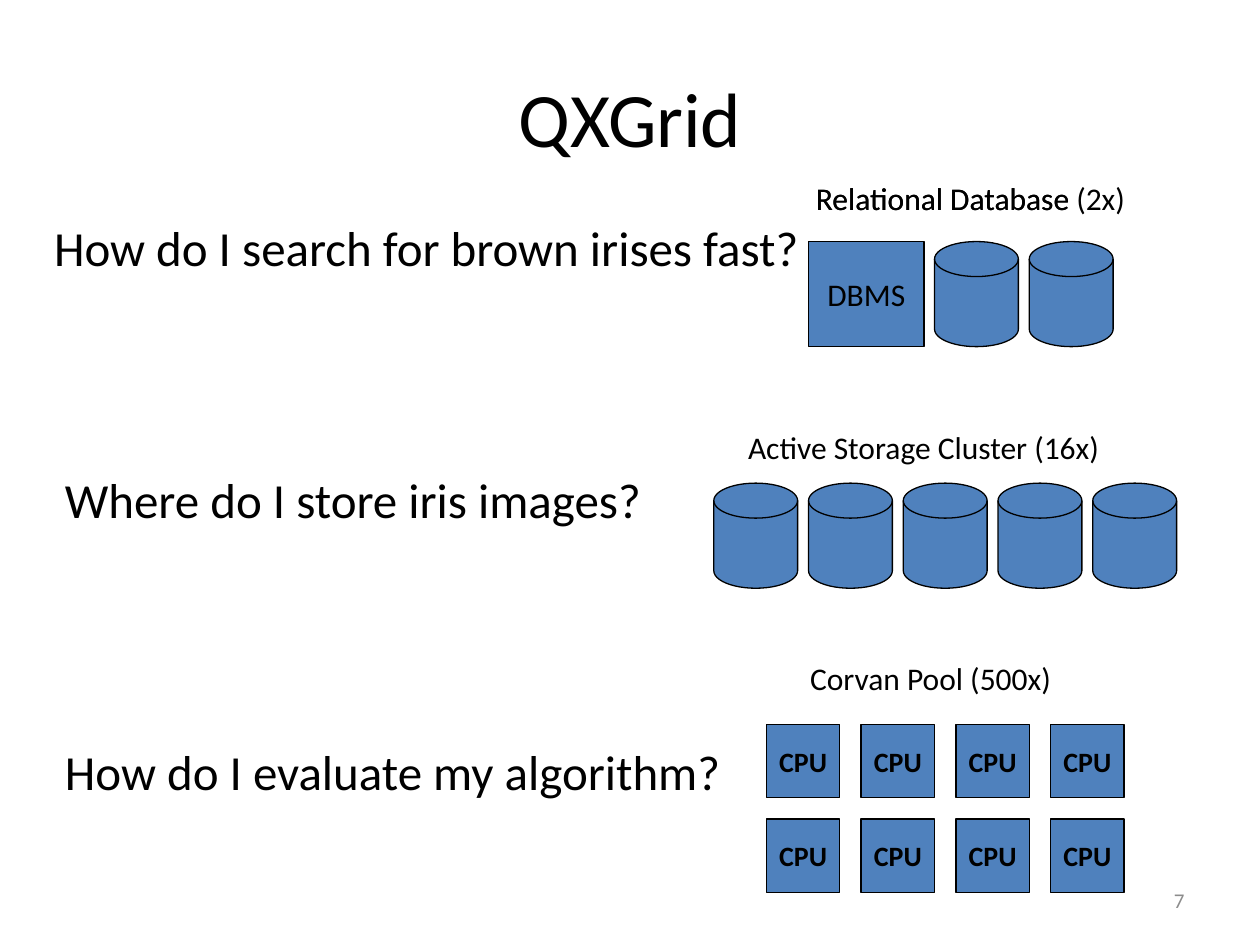
from pptx import Presentation
from pptx.dml.color import RGBColor
from pptx.enum.shapes import MSO_SHAPE
from pptx.enum.text import MSO_ANCHOR, MSO_AUTO_SIZE, PP_ALIGN
from pptx.util import Cm, Pt

COLORS = {"ink": "000000", "fill": "4F81BD", "gray": "8C8C8C"}
FONT = "Calibri"
STEP = 1.91  # pitch of disks and CPUs, in cm


class Board:
    def __init__(self, slide):
        self.slide = slide

    def color(self, name):
        return RGBColor.from_string(COLORS[name])

    def add_text(self, frame, text, size, color="ink", bold=False, align=PP_ALIGN.LEFT):
        para = frame.paragraphs[0]
        para.alignment = align
        run = para.add_run()
        run.text = text
        font = run.font
        font.name, font.size, font.bold = FONT, Pt(size), bold
        font.color.rgb = self.color(color)

    def title(self, text):
        shape = self.slide.shapes.title
        shape.left, shape.top = Cm(1.27), Cm(0.76)
        shape.width, shape.height = Cm(22.86), Cm(3.18)
        shape.text_frame.vertical_anchor = MSO_ANCHOR.MIDDLE
        self.add_text(shape.text_frame, text, 44, align=PP_ALIGN.CENTER)

    def label(self, text, left, top, width, height, size):
        box = self.slide.shapes.add_textbox(Cm(left), Cm(top), Cm(width), Cm(height))
        frame = box.text_frame
        frame.word_wrap = False
        frame.auto_size = MSO_AUTO_SIZE.SHAPE_TO_FIT_TEXT
        self.add_text(frame, text, size)

    def shape(self, kind, left, top, width, height):
        shape = self.slide.shapes.add_shape(kind, Cm(left), Cm(top), Cm(width), Cm(height))
        shape.shadow.inherit = False
        shape.fill.solid()
        shape.fill.fore_color.rgb = self.color("fill")
        shape.line.color.rgb = self.color("ink")
        shape.line.width = Pt(0.75)
        return shape

    def block(self, text, left, top, width, height, size, bold=False):
        frame = self.shape(MSO_SHAPE.RECTANGLE, left, top, width, height).text_frame
        frame.word_wrap = False
        frame.vertical_anchor = MSO_ANCHOR.MIDDLE
        self.add_text(frame, text, size, bold=bold, align=PP_ALIGN.CENTER)

    def disks(self, count, left, top):
        for col in range(count):
            self.shape(MSO_SHAPE.FLOWCHART_MAGNETIC_DISK, left + col * STEP, top, 1.69, 2.12)

    def number(self, text):
        box = self.slide.shapes.add_textbox(Cm(18.2), Cm(17.65), Cm(5.93), Cm(1.01))
        frame = box.text_frame
        frame.word_wrap = True
        frame.vertical_anchor = MSO_ANCHOR.MIDDLE
        self.add_text(frame, text, 12, "gray", align=PP_ALIGN.RIGHT)


def main():
    deck = Presentation()
    deck.slide_width, deck.slide_height = Cm(25.4), Cm(19.05)
    board = Board(deck.slides.add_slide(deck.slide_layouts[5]))
    board.title("QXGrid")

    for text, left, top, width in (
        ("How do I search for brown irises fast?", 0.84, 4.27, 15.7),
        ("Where do I store iris images?", 1.06, 9.35, 12.24),
        ("How do I evaluate my algorithm?", 1.06, 14.82, 13.87),
    ):
        board.label(text, left, top, width, 1.45, 28)

    for text, left, top, width in (
        ("Relational Database (2x)", 16.2, 3.48, 7.49),
        ("Relational Database", 16.2, 3.48, 6.22),
        ("Active Storage Cluster (16x)", 14.83, 8.5, 8.46),
        ("Corvan Pool (500x)", 16.08, 13.17, 6.02),
    ):
        board.label(text, left, top, width, 1.02, 18)

    board.block("DBMS", 16.3, 4.87, 2.33, 2.12, 18)
    board.disks(2, 18.84, 4.87)
    board.disks(5, 14.39, 9.74)

    for row in range(2):
        for col in range(4):
            board.block("CPU", 15.45 + col * STEP, 14.6 + row * STEP, 1.48, 1.48, 16, True)

    board.number("7")
    deck.save("out.pptx")


if __name__ == "__main__":
    main()
